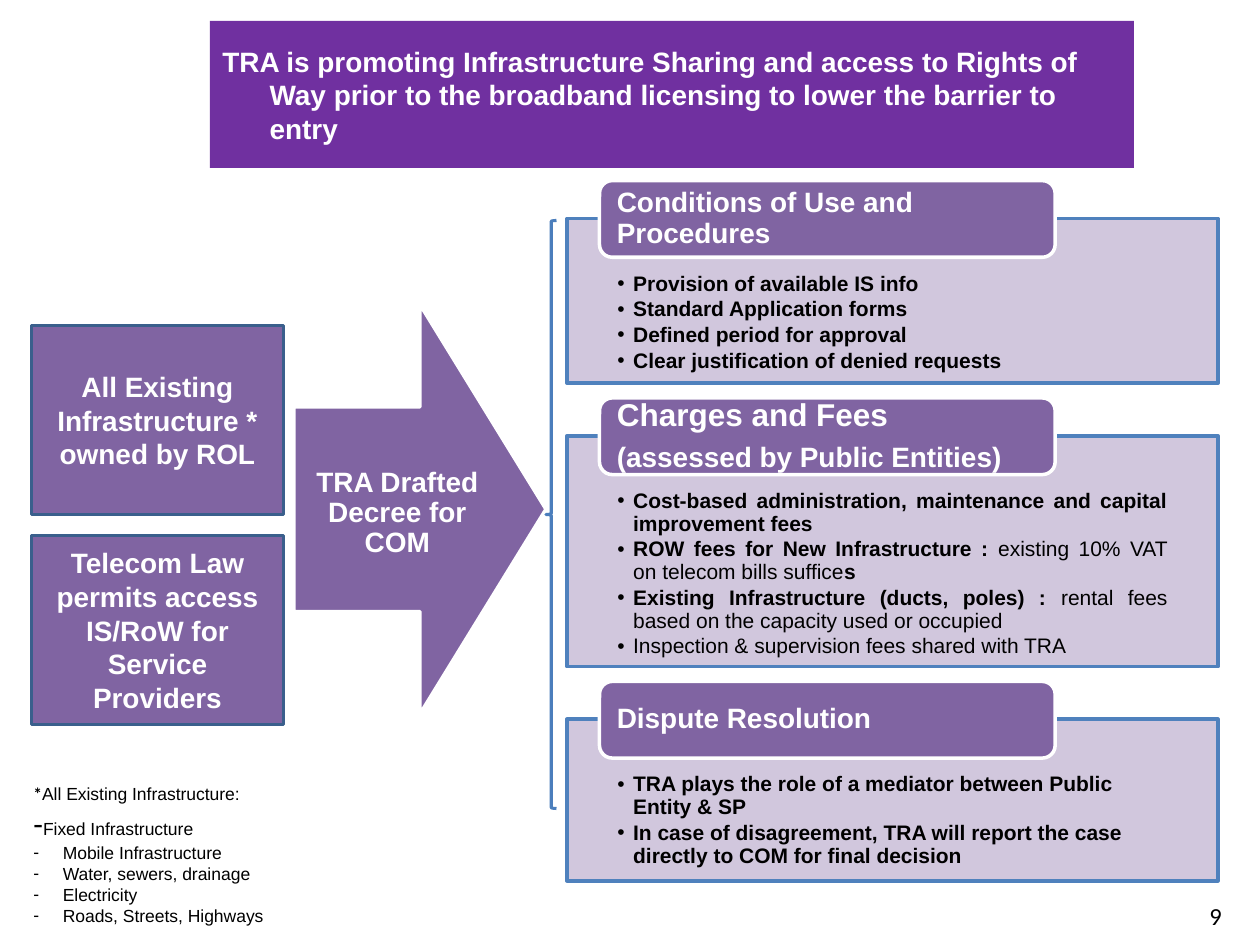
from dataclasses import dataclass

import lxml.etree
import pptx
import pptx.dml.color
import pptx.enum.shapes
import pptx.enum.text
import pptx.oxml.ns
import pptx.util

SHAPES = pptx.enum.shapes.MSO_SHAPE
ALIGN = pptx.enum.text.PP_ALIGN
ANCHOR = pptx.enum.text.MSO_ANCHOR
COLUMNS, ROWS = 120, 90
CELL = pptx.util.Inches(10) / COLUMNS


@dataclass(frozen=True)
class Theme:
    banner: str = "7030A0"
    block: str = "8064A2"
    panel: str = "CCC1DA"
    panel_edge: str = "4F81BD"
    block_edge: str = "3A5F8C"
    brace: str = "4B7EBC"
    light: str = "FFFFFF"
    dark: str = "000000"
    font: str = "Arial"
    second_font: str = "Calibri"
    large: int = 18
    heading: int = 16
    number: int = 14
    body: int = 12
    note: int = 10


THEME = Theme()


def rgb(color):
    return pptx.dml.color.RGBColor.from_string(color)


def place(box):
    return [round(length * CELL) for length in box]


def add_block(slide, kind, box, fill=None, edge=None, width=2, opacity=None):
    block = slide.shapes.add_shape(kind, *place(box))
    block.shadow.inherit = False
    if fill:
        block.fill.solid()
        block.fill.fore_color.rgb = rgb(fill)
        if opacity:
            color = block.fill._xPr.find(".//" + pptx.oxml.ns.qn("a:srgbClr"))
            lxml.etree.SubElement(color, pptx.oxml.ns.qn("a:alpha"), val=str(opacity * 1000))
    else:
        block.fill.background()
    if edge:
        block.line.color.rgb = rgb(edge)
        block.line.width = pptx.util.Pt(width)
    else:
        block.line.fill.background()
    return block


def add_label(slide, box):
    return slide.shapes.add_textbox(*place(box))


def set_indent(paragraph, hanging, bullet):
    props = paragraph._p.get_or_add_pPr()
    props.set("marL", str(round(hanging * CELL)))
    props.set("indent", str(round(-hanging * CELL)))
    if bullet:
        lxml.etree.SubElement(props, pptx.oxml.ns.qn("a:buFont"), typeface=THEME.font)
        lxml.etree.SubElement(props, pptx.oxml.ns.qn("a:buChar"), char=bullet)


def write(holder, paragraphs, size=THEME.heading, color=THEME.light, bold=True,
          font=THEME.font, align=ALIGN.LEFT, anchor=ANCHOR.MIDDLE, wrap=True,
          insets=(1.2, 0.6, 1.2, 0.6), spacing=None, after=0, hanging=0,
          bullet=None, bullets_from=0):
    """Each paragraph is a string or a list of (text, overrides) runs."""
    frame = holder.text_frame
    frame.word_wrap = wrap
    frame.vertical_anchor = anchor
    (frame.margin_left, frame.margin_top,
     frame.margin_right, frame.margin_bottom) = place(insets)
    for index, content in enumerate(paragraphs):
        paragraph = frame.add_paragraph() if index else frame.paragraphs[0]
        paragraph.alignment = align
        if spacing:
            paragraph.line_spacing = spacing
        if after:
            paragraph.space_after = pptx.util.Pt(after * size)
        if hanging and index >= bullets_from:
            set_indent(paragraph, hanging, bullet)
        for text, changes in [(content, {})] if isinstance(content, str) else content:
            look = {"size": size, "bold": bold, "font": font, **changes}
            run = paragraph.add_run()
            run.text = text
            run.font.size = pptx.util.Pt(look["size"])
            run.font.bold = look["bold"]
            run.font.name = look["font"]
            run.font.color.rgb = rgb(color)


def add_banner(slide, box, title):
    banner = add_block(slide, SHAPES.RECTANGLE, box, THEME.banner)
    write(banner, [title], hanging=4.5)


def add_topic(slide, box, heading, points, align=ALIGN.LEFT):
    left, top, width, height = box
    panel = add_block(slide, SHAPES.RECTANGLE, box, THEME.panel, THEME.panel_edge, opacity=90)
    write(panel, points, size=THEME.body, color=THEME.dark, align=align, anchor=ANCHOR.TOP,
          insets=(4.8, 5.2, 4.8, 1.1), spacing=0.9, after=0.15, hanging=1.5, bullet="•")
    tab = add_block(slide, SHAPES.ROUNDED_RECTANGLE,
                    (left + 0.05 * width, top - 3.6, 0.7 * width, 7.3),
                    THEME.block, THEME.light)
    write(tab, heading, insets=(1.3, 0, 1.3, 0), spacing=0.9, after=0.35)


def add_topics(slide, box, topics, gap):
    left, top, width = box
    for height, heading, points, align in topics:
        add_topic(slide, (left, top, width, height), heading, points, align)
        top += height + gap


def add_decree_arrow(slide, box, text):
    left, top, width, height = box
    add_block(slide, SHAPES.RIGHT_ARROW, box, THEME.block, THEME.light)
    caption = add_label(slide, (left, top + 0.36 * height, 0.82 * width, 0.3 * height))
    write(caption, [text], align=ALIGN.CENTER, insets=(0, 2.2, 0, 2.2),
          spacing=0.9, after=0.35)


def add_sources(slide, box, sources, gap):
    left, top, width, height = box
    for index, text in enumerate(sources):
        source = add_block(slide, SHAPES.RECTANGLE,
                           (left, top + index * (height + gap), width, height),
                           THEME.block, THEME.block_edge)
        write(source, [text], align=ALIGN.CENTER)


def add_footnote(slide, box, lines):
    write(add_label(slide, box), lines, size=THEME.note, color=THEME.dark, bold=False,
          anchor=ANCHOR.TOP, hanging=2.8, bullet="-", bullets_from=2)


def add_page_number(slide, box, number):
    write(add_label(slide, box), [number], size=THEME.number, color=THEME.dark, bold=False,
          font=THEME.second_font, anchor=ANCHOR.TOP, wrap=False)


def main():
    deck = pptx.Presentation()
    deck.slide_width, deck.slide_height = place((COLUMNS, ROWS))
    slide = deck.slides.add_slide(deck.slide_layouts[6])
    plain = {"bold": False}

    add_page_number(slide, (114, 85.2, 5.2, 4), "9")
    add_banner(slide, (20, 2, 88, 14),
               "TRA is promoting Infrastructure Sharing and access to Rights of Way "
               "prior to the broadband licensing to lower the barrier to entry")
    topics = [
        (15.7, ["Conditions of Use and Procedures"],
         ["Provision of available IS info", "Standard Application forms",
          "Defined period for approval", "Clear justification of denied requests"],
         ALIGN.LEFT),
        (22, [[("Charges and Fees", {"size": THEME.large})], "(assessed by Public Entities)"],
         ["Cost-based administration, maintenance and capital improvement fees",
          [("ROW fees for New Infrastructure : ", {}),
           ("existing 10% VAT on telecom bills suffice", plain), ("s", {})],
          [("Existing Infrastructure (ducts, poles) : ", {}),
           ("rental fees based on the capacity used or occupied", plain)],
          [("Inspection & supervision fees shared with TRA", plain)]],
         ALIGN.JUSTIFY),
        (15.4, ["Dispute Resolution"],
         ["TRA plays the role of a mediator between Public Entity & SP",
          "In case of disagreement, TRA will report the case directly to COM "
          "for final decision"],
         ALIGN.LEFT),
    ]
    add_topics(slide, (54, 20.8, 62), topics, gap=5)
    add_decree_arrow(slide, (28, 29, 24, 39), "TRA Drafted Decree for COM")
    add_sources(slide, (3, 31, 24, 18),
                ["All Existing Infrastructure * owned by ROL",
                 "Telecom Law permits access IS/RoW for Service Providers"], gap=2)
    add_footnote(slide, (2, 74, 40, 15), [
        [("*", {"font": THEME.second_font, "bold": True}),
         ("All Existing Infrastructure:", {})],
        [("-", {"font": THEME.second_font, "size": THEME.large}),
         ("Fixed Infrastructure", {})],
        "Mobile Infrastructure", "Water, sewers, drainage", "Electricity",
        "Roads, Streets, Highways"])
    add_block(slide, SHAPES.LEFT_BRACE, (52, 21, 1, 56), edge=THEME.brace, width=1.75)
    deck.save("out.pptx")


if __name__ == "__main__":
    main()
